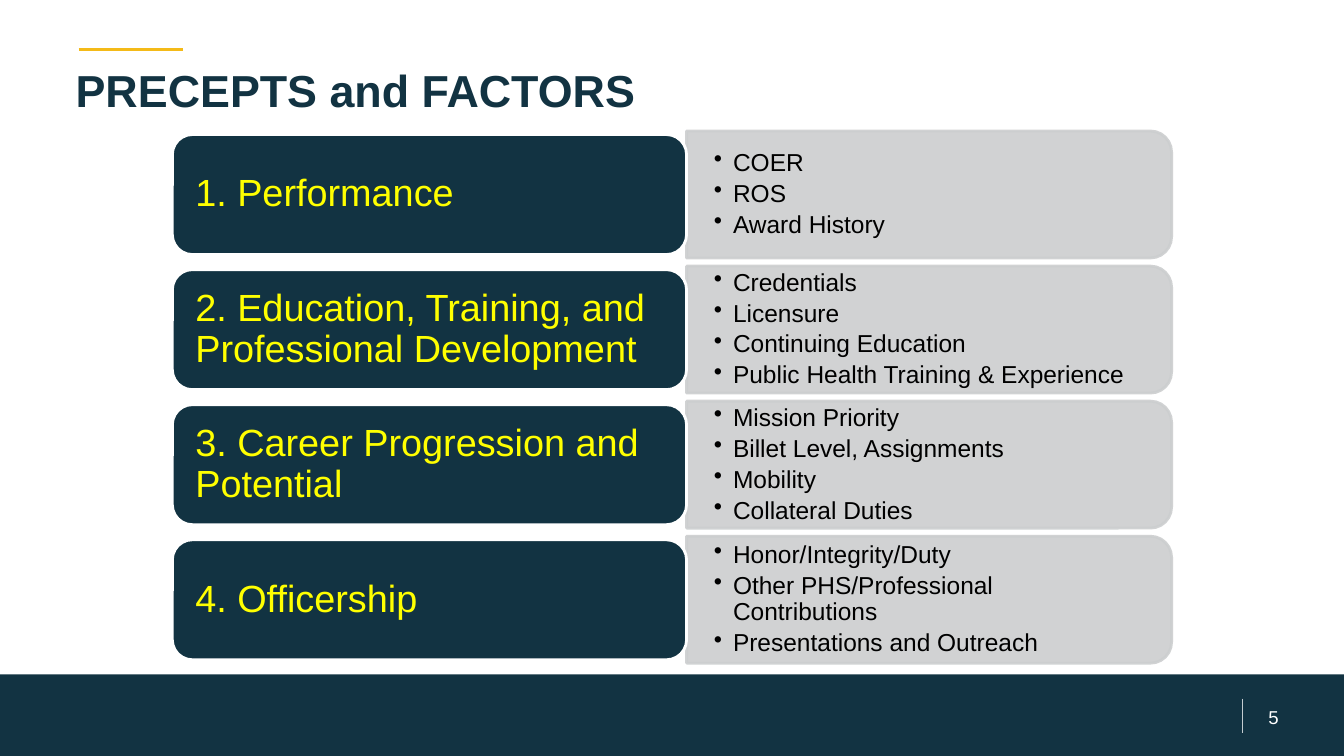
import pptx
import pptx.util
import pptx.dml.color
import pptx.enum.shapes
import pptx.enum.text
import pptx.oxml.ns
from lxml import etree

Inches = pptx.util.Inches
Pt = pptx.util.Pt
RGBColor = pptx.dml.color.RGBColor
MSO_SHAPE = pptx.enum.shapes.MSO_SHAPE
MSO_ANCHOR = pptx.enum.text.MSO_ANCHOR
PP_ALIGN = pptx.enum.text.PP_ALIGN
qn = pptx.oxml.ns.qn

TITLE = "PRECEPTS and FACTORS"
PAGE_NUMBER = "5"
PRECEPTS = [
    ("1. Performance", ["COER", "ROS", "Award History"]),
    ("2. Education, Training, and Professional Development",
     ["Credentials", "Licensure", "Continuing Education",
      "Public Health Training & Experience"]),
    ("3. Career Progression and Potential",
     ["Mission Priority", "Billet Level, Assignments", "Mobility",
      "Collateral Duties"]),
    ("4. Officership",
     ["Honor/Integrity/Duty", "Other PHS/Professional Contributions",
      "Presentations and Outreach"]),
]

NAVY = RGBColor(0x12, 0x33, 0x42)
GOLD = RGBColor(0xF4, 0xBA, 0x18)
PALE = RGBColor(0xC4, 0xCC, 0xD0)
GREY = RGBColor(0xCC, 0xCE, 0xCF)
YELLOW = RGBColor(0xFF, 0xFF, 0x00)
WHITE = RGBColor(0xFF, 0xFF, 0xFF)
BLACK = RGBColor(0x00, 0x00, 0x00)

SLIDE_WIDTH, SLIDE_HEIGHT = 13.33, 7.5
FOOTER_TOP = 6.69
LABEL_LEFT, LABEL_WIDTH, LABEL_HEIGHT = 1.71, 5.1, 1.19
PANEL_LEFT = LABEL_LEFT + LABEL_WIDTH
PANEL_WIDTH, PANEL_HEIGHT = 4.81, 1.26
LIST_WIDTH, LIST_HEIGHT = 4.75, 1.14
FIRST_CENTER, ROW_PITCH = 1.93, 1.34


def write_text(shape, lines, size, color, bold=False, align=PP_ALIGN.LEFT,
               anchor=MSO_ANCHOR.MIDDLE, margins=(0, 0, 0, 0),
               line_spacing=1.0, space_after=0, bullet=None):
    frame = shape.text_frame
    frame.word_wrap = True
    frame.auto_size = pptx.enum.text.MSO_AUTO_SIZE.NONE
    frame.vertical_anchor = anchor
    (frame.margin_left, frame.margin_top,
     frame.margin_right, frame.margin_bottom) = map(Inches, margins)
    for index, line in enumerate(lines):
        para = frame.paragraphs[0] if index == 0 else frame.add_paragraph()
        if bullet:
            properties = para._p.get_or_add_pPr()
            properties.set("marL", str(Inches(0.19)))
            properties.set("indent", str(Inches(-0.19)))
            etree.SubElement(properties, qn("a:buChar")).set("char", bullet)
        para.alignment = align
        para.line_spacing = line_spacing
        para.space_before = Pt(0)
        para.space_after = Pt(space_after)
        span = para.add_run()
        span.text = line
        span.font.name = "Arial"
        span.font.size = Pt(size)
        span.font.bold = bold
        span.font.color.rgb = color


def set_alpha(shape, percent):
    for color in shape._element.spPr.iter(qn("a:srgbClr")):
        etree.SubElement(color, qn("a:alpha")).set("val", str(percent * 1000))


def add_box(page, kind, left, top, width, height, fill, line=None):
    box = page.shapes.add_shape(kind, Inches(left), Inches(top),
                                Inches(width), Inches(height))
    box.shadow.inherit = False
    box.fill.solid()
    box.fill.fore_color.rgb = fill
    if line is None:
        box.line.fill.background()
    else:
        box.line.color.rgb = line
        box.line.width = Pt(2)
    return box


def add_rule(page, start, end, color, width):
    rule = page.shapes.add_connector(
        pptx.enum.shapes.MSO_CONNECTOR.STRAIGHT,
        *map(Inches, start + end))
    rule.line.color.rgb = color
    rule.line.width = Pt(width)
    etree.SubElement(rule._element.spPr, qn("a:effectLst"))


def add_text_box(page, left, top, width, height):
    return page.shapes.add_textbox(Inches(left), Inches(top),
                                   Inches(width), Inches(height))


def add_precept(page, center, label, factors):
    panel = add_box(page, MSO_SHAPE.ROUND_2_SAME_RECTANGLE,
                    PANEL_LEFT + (PANEL_WIDTH - PANEL_HEIGHT) / 2,
                    center - PANEL_WIDTH / 2,
                    PANEL_HEIGHT, PANEL_WIDTH, GREY, GREY)
    panel.rotation = 90
    set_alpha(panel, 90)
    factor_list = add_text_box(page, PANEL_LEFT, center - LIST_HEIGHT / 2,
                               LIST_WIDTH, LIST_HEIGHT)
    write_text(factor_list, factors, 17.5, BLACK, margins=(0.27, 0, 0.27, 0),
               line_spacing=0.9, space_after=3.2, bullet="•")
    name_box = add_box(page, MSO_SHAPE.ROUNDED_RECTANGLE, LABEL_LEFT,
                       center - LABEL_HEIGHT / 2, LABEL_WIDTH, LABEL_HEIGHT,
                       NAVY, WHITE)
    write_text(name_box, [label], 27, YELLOW,
               margins=(0.17, 0.12, 0.17, 0.12), line_spacing=0.9)


def main():
    deck = pptx.Presentation()
    deck.slide_width = Inches(SLIDE_WIDTH)
    deck.slide_height = Inches(SLIDE_HEIGHT)
    page = deck.slides.add_slide(deck.slide_layouts[5])

    add_rule(page, (0.78, 0.49), (1.82, 0.49), GOLD, 2.5)
    add_box(page, MSO_SHAPE.RECTANGLE, 0, FOOTER_TOP, SLIDE_WIDTH,
            SLIDE_HEIGHT - FOOTER_TOP, NAVY)
    number = add_text_box(page, 12.24, 6.97, 0.78, 0.28)
    write_text(number, [PAGE_NUMBER], 13.3, WHITE, align=PP_ALIGN.CENTER,
               margins=(0.13, 0.07, 0.13, 0.07))
    add_rule(page, (12.32, 6.93), (12.32, 7.27), PALE, 0.75)

    title = page.shapes.title
    title.left, title.top = Inches(0.67), Inches(0.53)
    title.width, title.height = Inches(12), Inches(1.07)
    write_text(title, [TITLE], 32, NAVY, bold=True, anchor=MSO_ANCHOR.TOP,
               margins=(0.08, 0.09, 0.08, 0.05))

    for row, (label, factors) in enumerate(PRECEPTS):
        add_precept(page, FIRST_CENTER + row * ROW_PITCH, label, factors)

    deck.save("out.pptx")


if __name__ == "__main__":
    main()
